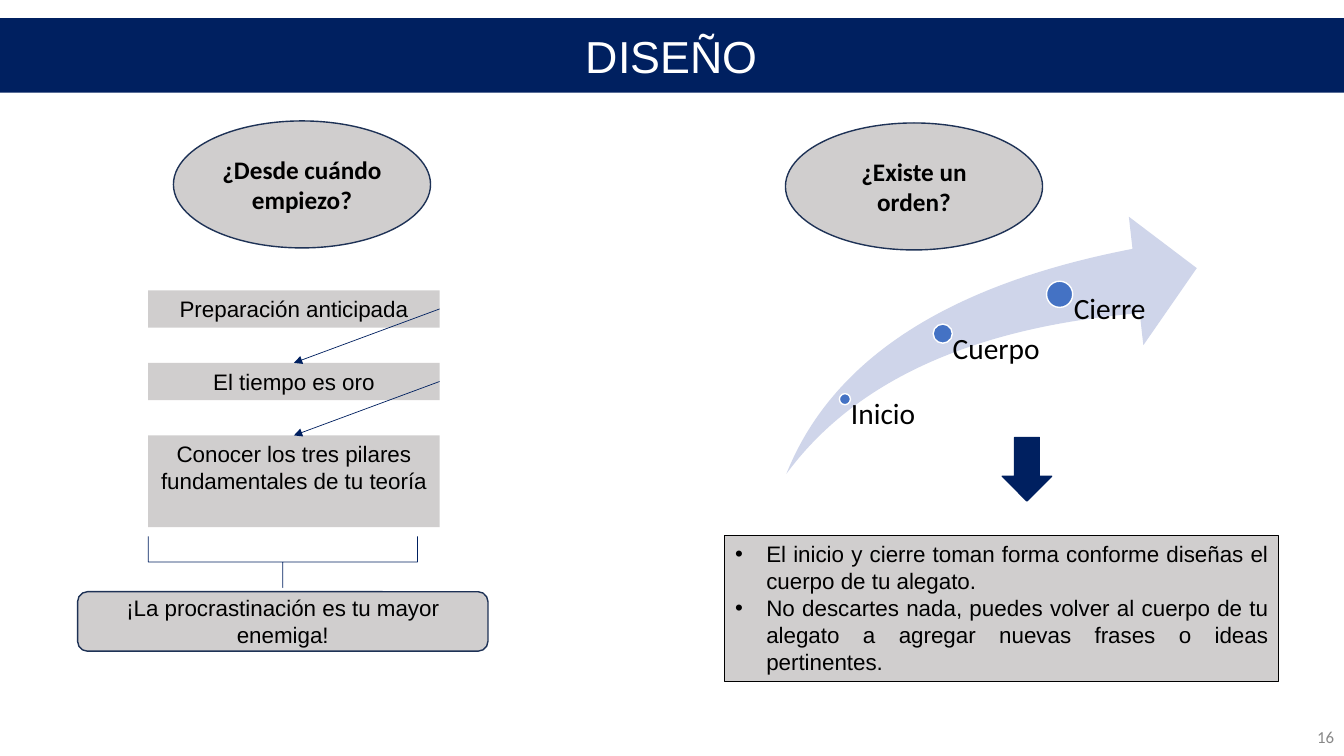
from dataclasses import dataclass
from typing import Optional

import pptx
import pptx.dml.color
import pptx.enum.dml
import pptx.enum.shapes
import pptx.enum.text
import pptx.oxml.ns
import pptx.util
from lxml import etree

Inches, Pt = pptx.util.Inches, pptx.util.Pt
SHAPE = pptx.enum.shapes.MSO_SHAPE
ALIGN = pptx.enum.text.PP_ALIGN
ANCHOR = pptx.enum.text.MSO_ANCHOR
qn = pptx.oxml.ns.qn

COLORS = {
    "navy": "002060", "outline": "1E3256", "gray": "D0CECE", "swoosh": "CFD5EA",
    "blue": "4472C4", "white": "FFFFFF", "black": "000000", "number": "888888",
}


@dataclass
class Box:
    """A preset shape with optional centred text."""
    kind: SHAPE
    at: tuple[float, float, float, float]
    text: str = ""
    fill: Optional[str] = "gray"
    line: Optional[str] = None
    width: float = 1
    font: str = "Arial"
    size: float = 16
    bold: bool = False
    anchor: ANCHOR = ANCHOR.MIDDLE


@dataclass
class Stage:
    """A dot on the swoosh, with the label that starts at its centre."""
    name: str
    x: float
    y: float
    dot: float
    width: float
    inset: float


def rgb(name: str) -> pptx.dml.color.RGBColor:
    return pptx.dml.color.RGBColor.from_string(COLORS[name])


def lengths(*values: float) -> list[pptx.util.Length]:
    return [Inches(v) for v in values]


def paint(sp, fill: Optional[str], line: Optional[str], width: float = 1) -> None:
    if fill:
        sp.fill.solid()
        sp.fill.fore_color.rgb = rgb(fill)
    else:
        sp.fill.background()
    if line:
        sp.line.color.rgb = rgb(line)
        sp.line.width = Pt(width)
    else:
        sp.line.fill.background()


def write(tf, text: str, size: float, font: str = "Arial", color: str = "black",
          align: ALIGN = ALIGN.CENTER, anchor: ANCHOR = ANCHOR.MIDDLE,
          bold: bool = False, spacing: float = 1.0) -> None:
    tf.text = text
    tf.word_wrap = True
    tf.auto_size = pptx.enum.text.MSO_AUTO_SIZE.NONE
    tf.vertical_anchor = anchor
    for p in tf.paragraphs:
        p.alignment = align
        p.line_spacing = spacing
        p.space_before = p.space_after = Pt(0)
        for r in p.runs:
            r.font.name, r.font.size, r.font.bold = font, Pt(size), bold
            r.font.color.rgb = rgb(color)


def place(sp, at: tuple[float, float, float, float]) -> None:
    sp.left, sp.top, sp.width, sp.height = lengths(*at)


def add_box(slide, box: Box):
    sp = slide.shapes.add_shape(box.kind, *lengths(*box.at))
    sp.shadow.inherit = False
    paint(sp, box.fill, box.line, box.width)
    if box.text:
        write(sp.text_frame, box.text, box.size, box.font,
              anchor=box.anchor, bold=box.bold)
    return sp


def add_arrow(slide, upper, lower) -> None:
    line = slide.shapes.add_connector(
        pptx.enum.shapes.MSO_CONNECTOR.STRAIGHT, 0, 0, 0, 0)
    line.begin_connect(upper, 3)
    line.end_connect(lower, 0)
    line.line.color.rgb = rgb("navy")
    line.line.width = Pt(0.5)
    props = line.element.find(qn("p:spPr"))
    etree.SubElement(props.find(qn("a:ln")), qn("a:tailEnd"), type="triangle")
    etree.SubElement(props, qn("a:effectLst"))


def add_bullet(p, indent: float) -> None:
    props = p._p.get_or_add_pPr()
    props.set("marL", str(Inches(indent)))
    props.set("indent", str(-Inches(indent)))
    etree.SubElement(props, qn("a:buFont"), typeface="Arial")
    etree.SubElement(props, qn("a:buChar"), char="•")


def add_stage(slide, stage: Stage, bottom: float) -> None:
    r = stage.dot / 2
    add_box(slide, Box(SHAPE.OVAL, (stage.x - r, stage.y - r, stage.dot, stage.dot),
                       fill="blue", line="white"))
    sp = slide.shapes.add_textbox(
        *lengths(stage.x, stage.y, stage.width, bottom - stage.y))
    tf = sp.text_frame
    tf.margin_left = Inches(stage.inset)
    tf.margin_top = tf.margin_right = tf.margin_bottom = 0
    write(tf, stage.name, 21, "Calibri", align=ALIGN.LEFT,
          anchor=ANCHOR.TOP, spacing=0.9)


STEPS = [
    ("Preparación anticipada", 2.88, 0.37),
    ("El tiempo es oro", 3.6, 0.37),
    ("Conocer los tres pilares fundamentales de tu teoría", 4.32, 0.91),
]
QUESTIONS = [("¿Desde cuándo empiezo?", 1.72, 1.2), ("¿Existe un orden?", 7.79, 1.22)]
STAGES = [
    Stage("Inicio", 8.38, 3.96, 0.11, 0.95, 0.06),
    Stage("Cuerpo", 9.35, 3.31, 0.19, 0.98, 0.1),
    Stage("Cierre", 10.51, 2.92, 0.26, 0.98, 0.14),
]
ADVICE = [
    "El inicio y cierre toman forma conforme diseñas el cuerpo de tu alegato.",
    "No descartes nada, puedes volver al cuerpo de tu alegato a agregar "
    "nuevas frases o ideas pertinentes.",
]


def main() -> None:
    prs = pptx.Presentation()
    prs.slide_width, prs.slide_height = lengths(13.33, 7.5)
    slide = prs.slides.add_slide(prs.slide_layouts[1])

    # Title band
    title = slide.shapes.title
    place(title, (0, 0.18, 13.33, 0.74))
    paint(title, "navy", None)
    write(title.text_frame, "DISEÑO", 32, color="white")

    # Advice list
    body = slide.placeholders[1]
    place(body, (7.19, 5.31, 5.49, 1.45))
    paint(body, "gray", "black", 0.75)
    write(body.text_frame, "\n".join(ADVICE), 16, align=ALIGN.JUSTIFY, anchor=ANCHOR.TOP)
    for p in body.text_frame.paragraphs:
        add_bullet(p, 0.31)

    # Preparation steps, joined by arrows
    steps = [add_box(slide, Box(SHAPE.RECTANGLE, (1.47, top, 2.89, height), text,
                                anchor=ANCHOR.TOP))
             for text, top, height in STEPS]
    for upper, lower in zip(steps, steps[1:]):
        add_arrow(slide, upper, lower)

    # Bracket and conclusion
    brace = add_box(slide, Box(SHAPE.RIGHT_BRACE, (2.55, 4.24, 0.51, 2.67),
                               fill=None, line="navy", width=0.5))
    brace.adjustments[0] = 0
    brace.rotation = 90
    add_box(slide, Box(SHAPE.ROUNDED_RECTANGLE, (0.77, 5.87, 4.07, 0.59),
                       "¡La procrastinación es tu mayor enemiga!", line="outline"))

    # Stages along the swoosh
    swoosh = add_box(slide, Box(SHAPE.SWOOSH_ARROW, (7.8, 2.15, 4.07, 2.55), fill="swoosh"))
    swoosh.adjustments[0] = swoosh.adjustments[1] = 0.25
    for stage in STAGES:
        add_stage(slide, stage, bottom=4.7)
    add_box(slide, Box(SHAPE.DOWN_ARROW, (9.94, 4.34, 0.49, 0.63), fill="navy", line="navy"))

    # Questions
    for text, left, top in QUESTIONS:
        add_box(slide, Box(SHAPE.OVAL, (left, top, 2.55, 1.26), text, line="outline",
                           font="Calibri", size=18, bold=True))

    # Slide number
    number = slide.shapes.add_textbox(*lengths(10.33, 7.11, 3, 0.4))
    write(number.text_frame, "16", 12, "Calibri", "number", ALIGN.RIGHT)

    prs.save("out.pptx")


if __name__ == "__main__":
    main()
